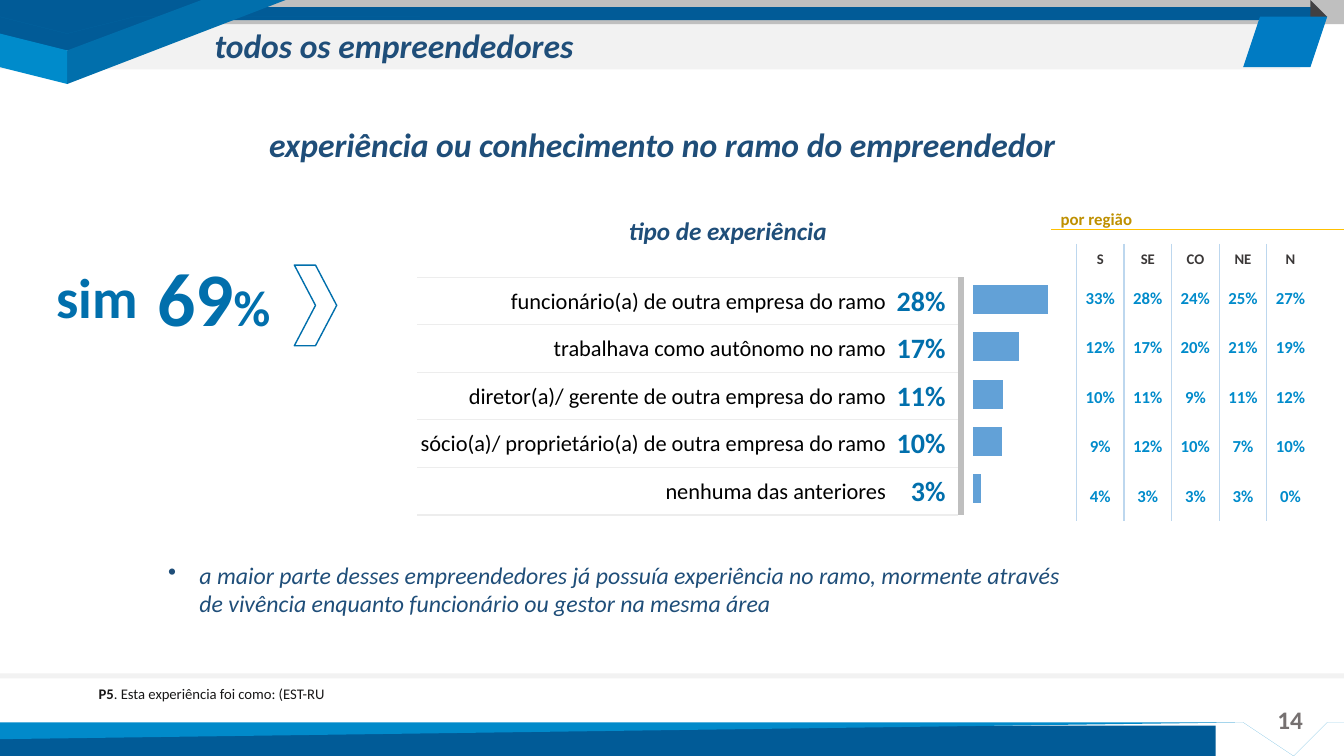
"""Build the slide on founders' prior trade experience, on a grid of 80 columns by 45 rows."""
from lxml import etree
from pptx import Presentation, util as u
from pptx.chart import data
from pptx.dml.color import RGBColor
from pptx.enum import chart as ch, shapes, text
from pptx.oxml import ns

COLS, ROWS = 80, 45
UNIT = u.Inches(7.5) // ROWS

DEEP = RGBColor(0x01, 0x5B, 0x97)
BLUE = RGBColor(0x01, 0x6F, 0xAC)
SKY = RGBColor(0x00, 0x8B, 0xCB)
TRIM = RGBColor(0x01, 0x8A, 0xCA)
BADGE = RGBColor(0x00, 0x7B, 0xC3)
NAVY = RGBColor(0x1F, 0x4E, 0x79)
BAR = RGBColor(0x62, 0xA1, 0xD7)
PALE = RGBColor(0xBD, 0xD7, 0xEE)
MIST = RGBColor(0xF2, 0xF2, 0xF2)
RULE = RGBColor(0xED, 0xED, 0xED)
SILVER = RGBColor(0xBF, 0xBF, 0xBF)
GREY = RGBColor(0x76, 0x71, 0x71)
DARK = RGBColor(0x3B, 0x38, 0x38)
COAL = RGBColor(0x41, 0x40, 0x42)
INK = RGBColor(0x18, 0x17, 0x17)
BLACK = RGBColor(0, 0, 0)
GOLD = RGBColor(0xBF, 0x90, 0x00)
AMBER = RGBColor(0xFF, 0xC0, 0x00)

LEFT, MID, RIGHT = text.PP_ALIGN.LEFT, text.PP_ALIGN.CENTER, text.PP_ALIGN.RIGHT
HEAD = dict(size=24, color=NAVY, bold=True, italic=True)

BANDS = [
    ((0, 0.9, 77.4, 3.24), MIST),
    ((0, 0, COLS, 1.44), SILVER),
    ((6.78, 0.42, 71.4, 0.78), DEEP),
    ((0, 40.08, COLS, 0.3), MIST),
    ((0, 43.2, 72.36, 1.8), DEEP),
]
FACETS = [
    ([(0.06, 0), (15.54, 0), (7.74, 3.3), (0, 3.3)], DEEP),
    ([(17.22, 0), (12.24, 0), (3.9, 2.94), (3.9, 4.98)], BLUE),
    ([(3.9, 3), (0.06, 1.62), (0.06, 3.6), (3.9, 4.98)], SKY),
    ([(0, 43.32), (74.04, 43.2), (76.62, 44.58), (79.26, 43.2), (COLS, 43.2),
      (COLS, 43.44), (79.26, 43.44), (76.62, 44.88), (73.98, 43.44), (0, 43.5)], TRIM),
    ([(0.06, 0.9), (0.36, 0.9), (4.2, 2.28), (8.04, 0.9), (24.6, 0.9),
      (24.6, 1.08), (8.04, 1.08), (4.2, 2.46), (0.36, 1.08), (0.06, 1.08)], BLUE),
    ([(78.18, 1.2), (78.18, 0.42), (79.08, 1.2)], COAL),
    ([(75.18, 1.2), (79.08, 1.2), (78.36, 4.26), (78.12, 4.5), (74.46, 4.5),
      (74.28, 4.26), (74.88, 1.44)], BADGE),
]
KINDS = [
    ("funcionário(a) de outra empresa do ramo", "28%"),
    ("trabalhava como autônomo no ramo", "17%"),
    ("diretor(a)/ gerente de outra empresa do ramo", "11%"),
    ("sócio(a)/ proprietário(a) de outra empresa do ramo", "10%"),
    ("nenhuma das anteriores", "3%"),
]
ZONES = [
    ("S", "SE", "CO", "NE", "N"),
    ("33%", "28%", "24%", "25%", "27%"),
    ("12%", "17%", "20%", "21%", "19%"),
    ("10%", "11%", "9%", "11%", "12%"),
    ("9%", "12%", "10%", "7%", "10%"),
    ("4%", "3%", "3%", "3%", "0%"),
]


def grid(*cells):
    """Turn grid units into lengths."""
    return [u.Emu(round(c * UNIT)) for c in cells]


def assign(item, **fmt):
    """Set each attribute named in the format."""
    for key, val in fmt.items():
        setattr(item, key, val)


def write(para, words, size, color, **fmt):
    """Add a run of text with its font."""
    run = para.add_run()
    run.text = words
    assign(run.font, name="Calibri", size=u.Pt(size), **fmt)
    run.font.color.rgb = color


def paint(shape, fill):
    """Give a shape a plain fill without line or shadow."""
    shape.shadow.inherit = False
    shape.fill.solid()
    shape.fill.fore_color.rgb = fill
    shape.line.fill.background()


def band(slide, box, fill):
    """Draw a filled strip."""
    paint(slide.shapes.add_shape(shapes.MSO_SHAPE.RECTANGLE, *grid(*box)), fill)


def facet(slide, points, fill):
    """Draw a filled polygon."""
    form = slide.shapes.build_freeform(*points[0], scale=UNIT)
    form.add_line_segments(points[1:], close=True)
    paint(form.convert_to_shape(), fill)


def label(slide, box, *runs, wrap=True, **fmt):
    """Place a text box of one paragraph and return the paragraph."""
    frame = slide.shapes.add_textbox(*grid(*box)).text_frame
    frame.word_wrap = wrap
    para = frame.paragraphs[0]
    assign(para, **fmt)
    for words, font in runs:
        write(para, words, **font)
    return para


def bullet(para, inset):
    """Give a paragraph a hanging bullet."""
    props = para._p.get_or_add_pPr()
    props.set("marL", str(inset))
    props.set("indent", str(-inset))
    etree.SubElement(props, ns.qn("a:buChar")).set("char", "•")


def table(slide, spot, cols, rows):
    """Add a table without style and return it."""
    size = grid(sum(cols), sum(rows))
    tab = slide.shapes.add_table(len(rows), len(cols), *grid(*spot), *size).table
    assign(tab, first_row=False, horz_banding=False)
    tab._tbl.tblPr.find(ns.qn("a:tableStyleId")).text = "{2D5ABB26-0587-4C30-8999-92F81FD0307C}"
    for col, wide in zip(tab.columns, grid(*cols)):
        col.width = wide
    for row, high in zip(tab.rows, grid(*rows)):
        row.height = high
    for cell in tab.iter_cells():
        assign(cell, vertical_anchor=text.MSO_ANCHOR.MIDDLE, margin_bottom=0,
               **dict.fromkeys(("margin_left", "margin_right", "margin_top"), u.Inches(0.01)))
    return tab


def fill_in(cell, words, align, **font):
    """Write a cell's text."""
    para = cell.text_frame.paragraphs[0]
    para.alignment = align
    write(para, words, **font)


def border(cell, sides, color):
    """Rule the given sides of a cell."""
    props = cell._tc.get_or_add_tcPr()
    for spot, side in enumerate(sides):
        line = etree.Element(ns.qn(f"a:ln{side}"), w=str(u.Pt(1)))
        solid = etree.SubElement(line, ns.qn("a:solidFill"))
        etree.SubElement(solid, ns.qn("a:srgbClr"), val=str(color))
        props.insert(spot, line)


def kinds(slide):
    """Add the table of kinds of experience."""
    tab = table(slide, (24.84, 16.5), (27.96, 4.2, 0.36), [2.83] * len(KINDS))
    for r, (name, share) in enumerate(KINDS):
        first, second, edge = (tab.cell(r, c) for c in range(3))
        fill_in(first, name, RIGHT, size=16, color=BLACK)
        fill_in(second, share, RIGHT, size=20, color=BLUE, bold=True)
        second.margin_right = u.Inches(0.12)
        for cell in (first, second):
            border(cell, "TB", RULE)
        edge.fill.solid()
        edge.fill.fore_color.rgb = SILVER


def zones(slide):
    """Add the table of shares by region."""
    tab = table(slide, (64.08, 14.52), [2.83] * 5, [1.74] + [2.95] * 5)
    for r, row in enumerate(ZONES):
        font = dict(size=12, color=SKY) if r else dict(size=10.5, color=DARK)
        for c, words in enumerate(row):
            fill_in(tab.cell(r, c), words, MID, bold=True, **font)
            border(tab.cell(r, c), "L", PALE)


def bars(slide, box):
    """Add the bar chart beside the kinds."""
    book = data.CategoryChartData(number_format="0")
    book.categories = ["1", "2", "3", "4", "5"]
    book.add_series("Series 1", (100, 62, 40, 38, 10))
    chart = slide.shapes.add_chart(ch.XL_CHART_TYPE.BAR_CLUSTERED, *grid(*box), book).chart
    assign(chart, has_legend=False, has_title=False)
    assign(chart.font, name="Calibri", size=u.Pt(10))
    chart.font.color.rgb = BLACK
    assign(chart.category_axis, visible=False, reverse_order=True)
    assign(chart.value_axis, visible=False, has_major_gridlines=False,
           minimum_scale=0, maximum_scale=250)
    plot = chart.plots[0]
    assign(plot, gap_width=62, vary_by_categories=False)
    fill = plot.series[0].format.fill
    fill.solid()
    fill.fore_color.rgb = BAR
    area = chart._chartSpace.chart.plotArea
    for old in area.findall(ns.qn("c:layout")):
        area.remove(old)
    frame = etree.Element(ns.qn("c:layout"))
    area.insert(0, frame)
    hand = etree.SubElement(frame, ns.qn("c:manualLayout"))
    marks = dict(layoutTarget="inner", xMode="edge", yMode="edge", x="0.03", y="0", w="0.97", h="1")
    for key, val in marks.items():
        etree.SubElement(hand, ns.qn(f"c:{key}"), val=val)


def arrow(slide, box):
    """Draw the outlined chevron."""
    mark = slide.shapes.add_shape(shapes.MSO_SHAPE.CHEVRON, *grid(*box))
    mark.shadow.inherit = False
    mark.fill.background()
    mark.line.color.rgb = BLUE
    mark.line.width = u.Pt(1)


def stroke(slide, ends):
    """Draw the thin rule under the region heading."""
    line = slide.shapes.add_connector(shapes.MSO_CONNECTOR.STRAIGHT, *grid(*ends))
    line.line.color.rgb = AMBER
    line.line.width = u.Pt(0.5)
    etree.SubElement(line._element.spPr, ns.qn("a:effectLst"))


def main():
    """Compose the slide and save it."""
    deck = Presentation()
    assign(deck, slide_width=u.Emu(COLS * UNIT), slide_height=u.Emu(ROWS * UNIT))
    slide = deck.slides.add_slide(deck.slide_layouts[6])
    for box, fill in BANDS:
        band(slide, box, fill)
    for points, fill in FACETS:
        facet(slide, points, fill)
    big = dict(color=BLUE, bold=True)
    note = dict(size=10.5, color=INK)
    label(slide, (74.94, 41.64, 3.72, 2.4), ("14", dict(size=18, color=GREY, bold=True)),
          wrap=False, alignment=MID)
    label(slide, (5.28, 40.44, 29.88, 4.38), ("P5", dict(note, bold=True)),
          (". Esta experiência foi como: (EST-RU", note))
    label(slide, (12.18, 1.44, 62.46, 3.06), ("todos os empreendedores", HEAD), line_spacing=0.9)
    label(slide, (14.76, 7.38, 49.32, 3.24),
          ("experiência ou conhecimento no ramo do empreendedor", HEAD),
          alignment=MID, line_spacing=0.9)
    label(slide, (36.84, 12.72, 14.34, 2.16), ("tipo de experiência", dict(HEAD, size=18)),
          line_spacing=0.9)
    kinds(slide)
    bars(slide, (57.6, 16.44, 11.4, 14.04))
    arrow(slide, (17.52, 15.78, 2.52, 4.8))
    zones(slide)
    label(slide, (2.76, 15.36, 6.12, 4.62), ("sim", dict(big, size=40)), wrap=False)
    label(slide, (8.76, 14.64, 8.04, 6.06), ("69", dict(big, size=54)),
          ("%", dict(big, size=36)), wrap=False)
    bullet(label(slide, (9.42, 33.06, 54.66, 4.02), (
        "a maior parte desses empreendedores já possuía experiência no ramo, mormente através "
        "de vivência enquanto funcionário ou gestor na mesma área",
        dict(size=17, color=NAVY, italic=True))), u.Inches(0.31))
    label(slide, (60.9, 12.24, 7.08, 1.68), ("por região", dict(size=12, color=GOLD, bold=True)),
          alignment=RIGHT, line_spacing=0.9)
    stroke(slide, (62.58, 13.68, COLS, 13.68))
    deck.save("out.pptx")


if __name__ == "__main__":
    main()
